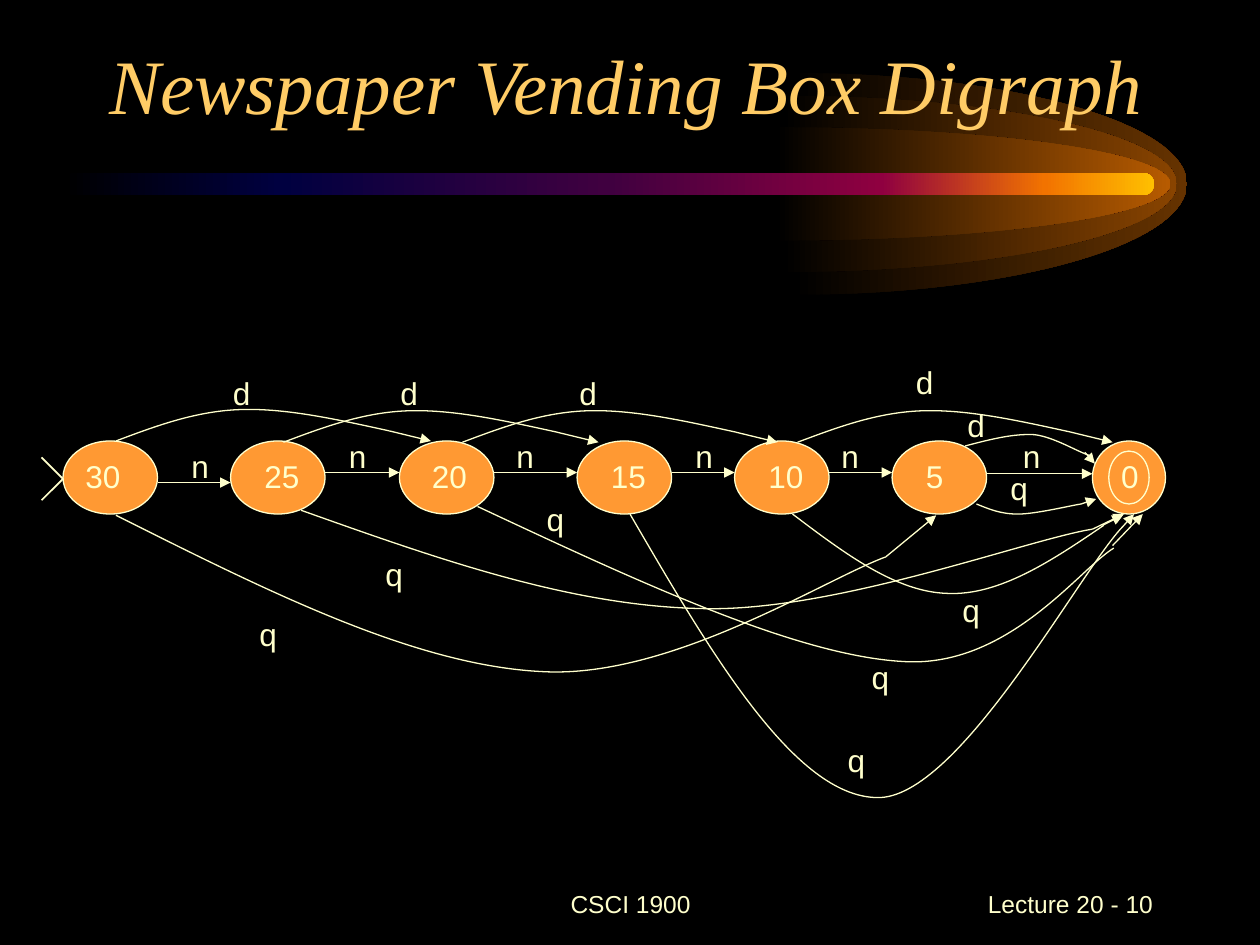
from lxml import etree
from pptx import Presentation
from pptx.dml.color import RGBColor
from pptx.enum.shapes import MSO_CONNECTOR, MSO_SHAPE
from pptx.enum.text import MSO_ANCHOR, PP_ALIGN
from pptx.oxml.ns import qn
from pptx.util import Inches, Pt

STRAIGHT = MSO_CONNECTOR.STRAIGHT
OVAL = MSO_SHAPE.OVAL
ROUNDED = MSO_SHAPE.ROUNDED_RECTANGLE
TOP, MIDDLE, BOTTOM = MSO_ANCHOR.TOP, MSO_ANCHOR.MIDDLE, MSO_ANCHOR.BOTTOM
LEFT, CENTER, RIGHT = PP_ALIGN.LEFT, PP_ALIGN.CENTER, PP_ALIGN.RIGHT
COLORS = {"background": "000000", "title": "FFCC66", "ink": "FFFFCC", "node": "FF9933"}

presentation = Presentation()
presentation.slide_width = Inches(10)
presentation.slide_height = Inches(7.5)
slide = presentation.slides.add_slide(presentation.slide_layouts[6])
slide.background.fill.solid()
slide.background.fill.fore_color.rgb = RGBColor.from_string(COLORS["background"])
shapes = slide.shapes


def add_text(words, left, top, width, height, size=18, font="Arial",
             color="ink", align=LEFT, anchor=TOP, italic=False):
    frame = shapes.add_textbox(Inches(left), Inches(top), Inches(width), Inches(height)).text_frame
    frame.word_wrap = True
    frame.vertical_anchor = anchor
    paragraph = frame.paragraphs[0]
    paragraph.alignment = align
    run = paragraph.add_run()
    run.text = words
    run.font.size = Pt(size)
    run.font.name = font
    run.font.italic = italic
    run.font.color.rgb = RGBColor.from_string(COLORS[color])


def add_curve(points):
    points = [(Inches(x), Inches(y)) for x, y in points]
    builder = shapes.build_freeform(*points[0], scale=1.0)
    builder.add_line_segments(points[3::3], close=False)
    shape = builder.convert_to_shape()
    shape.shadow.inherit = False
    segments = list(shape._element.spPr.iter(qn("a:lnTo")))
    for number, segment in enumerate(segments):
        segment.tag = qn("a:cubicBezTo")
        for position, (x, y) in enumerate(points[number * 3 + 1:number * 3 + 3]):
            handle = etree.Element(qn("a:pt"), x=str(x - shape.left), y=str(y - shape.top))
            segment.insert(position, handle)
    return shape


glow_middle = 1.46
glows = []
for left, right, half_height, color in [(6.29, 9.42, 0.88, "663300"), (6.21, 9.34, 0.7, "894400"),
                                        (6.16, 9.29, 0.45, "B75B00")]:
    pull_x = left + (right - left) * 0.55
    pull_y = half_height * 0.55
    top, bottom = glow_middle - half_height, glow_middle + half_height
    glow = add_curve([(left, top), (pull_x, top), (right, glow_middle - pull_y), (right, glow_middle),
                      (right, glow_middle + pull_y), (pull_x, bottom), (left, bottom)])
    glows.append((glow, [(0, "000000"), (100, color)]))

beam = shapes.add_shape(ROUNDED, Inches(0.5), Inches(1.37), Inches(8.66), Inches(0.18))
beam.adjustments[0] = 0.5
beam.shadow.inherit = False
glows.append((beam, [(0, "000000"), (20, "000040"), (50, "400040"),
                     (75, "8F0040"), (90, "F27300"), (100, "FFBF00")]))

for shape, stops in glows:
    shape.line.fill.background()
    shape.fill.gradient()
    shape.fill.gradient_angle = 0
    stop_list = shape._element.spPr.find(qn("a:gradFill")).find(qn("a:gsLst"))
    for stop in list(stop_list):
        stop_list.remove(stop)
    for percent, color in stops:
        stop = etree.SubElement(stop_list, qn("a:gs"), pos=str(percent * 1000))
        etree.SubElement(stop, qn("a:srgbClr"), val=color)

add_text("CSCI 1900", 3.42, 6.92, 3.17, 0.5, size=14, align=CENTER, anchor=MIDDLE)
add_text("Lecture 20 - 10", 7.17, 6.92, 2.08, 0.5, size=14, align=RIGHT, anchor=MIDDLE)
add_text("Newspaper Vending Box Digraph", 0.25, 0.25, 8.92, 0.83, size=44, font="Times New Roman",
         color="title", align=RIGHT, anchor=BOTTOM, italic=True)

node_lefts = [0.5, 1.83, 3.17, 4.58, 5.83, 7.08]
ovals = [(left, 3.5, 0.75, 0.58) for left in node_lefts]
ovals += [(8.67, 3.5, 0.58, 0.58), (8.8, 3.58, 0.32, 0.42)]
for place in ovals:
    oval = shapes.add_shape(OVAL, *[Inches(value) for value in place])
    oval.shadow.inherit = False
    oval.fill.solid()
    oval.fill.fore_color.rgb = RGBColor.from_string(COLORS["node"])
    oval.line.color.rgb = RGBColor.from_string(COLORS["ink"])
    oval.line.width = Pt(0.75)

label_lefts = [0.58, 2, 3.33, 4.75, 6, 7.25, 8.8]
for amount, left in zip(["30", "25", "20", "15", "10", "5", "0"], label_lefts):
    add_text(amount, left, 3.58, 0.39 if amount == "0" else 0.5, 0.4)

edge_labels = {
    "n": [(1.42, 3.5), (2.67, 3.42), (4, 3.42), (5.42, 3.42), (6.58, 3.42), (8.02, 3.42)],
    "d": [(1.75, 2.92), (3.08, 2.92), (4.5, 2.92), (7.17, 2.83), (7.58, 3.17)],
    "q": [(1.96, 4.83), (2.96, 4.36), (4.24, 3.92), (6.63, 5.83), (6.82, 5.17),
          (7.54, 4.64), (7.92, 3.67)],
}
for coin, places in edge_labels.items():
    for left, top in places:
        add_text(coin, left, top, 0.8 if coin == "q" else 0.42, 0.4)

lines = []
for left, next_left, y in zip(node_lefts, node_lefts[1:] + [8.67], [3.83] + [3.75] * 4 + [3.76]):
    lines.append(((left + 0.75, y), (next_left, y), True))

dime_starts = [(0.92, 3.5), (2.25, 3.51), (3.67, 3.51), (6.33, 3.51)]
curves = []
for x, y in dime_starts:
    curves.append([(x + dx, y + dy) for dx, dy in [
        (0, 0), (0.32, -0.12), (0.64, -0.24), (1, -0.25),
        (1.36, -0.26), (1.76, -0.17), (2.17, -0.08)]])
    lines.append(((x + 2.17, y - 0.08), (x + 2.5, y), True))

curves += [
    [(7.66, 3.54), (7.85, 3.49), (8.04, 3.44), (8.21, 3.45), (8.38, 3.47), (8.59, 3.61), (8.67, 3.62)],
    [(0.92, 4.09), (2.1, 4.68), (3.28, 5.28), (4.3, 5.33), (5.32, 5.39), (6.54, 4.6), (7.03, 4.42)],
    [(2.39, 4.05), (3.46, 4.43), (4.52, 4.81), (5.57, 4.83), (6.62, 4.86), (8.16, 4.28), (8.67, 4.2)],
    [(3.79, 4.02), (5.05, 4.61), (6.31, 5.2), (7.16, 5.25), (8, 5.31), (8.57, 4.51), (8.84, 4.35)],
    [(5, 4.08), (5.65, 5.2), (6.31, 6.32), (6.96, 6.33), (7.61, 6.35), (8.58, 4.51), (8.92, 4.17)],
    [(6.29, 4.08), (6.7, 4.39), (7.11, 4.7), (7.52, 4.71), (7.93, 4.73), (8.35, 4.45), (8.76, 4.17)],
    [(7.75, 4), (7.85, 4.04), (7.94, 4.08), (8.08, 4.08), (8.22, 4.08), (8.51, 4.01), (8.58, 4)],
]
for points in curves:
    curve = add_curve(points)
    curve.fill.background()
    curve.line.color.rgb = RGBColor.from_string(COLORS["ink"])
    curve.line.width = Pt(0.75)

lines += [
    ((8.61, 3.59), (8.69, 3.68), True),
    ((7.03, 4.42), (7.43, 4.09), True),
    ((8.67, 4.2), (8.92, 4.08), True),
    ((8.83, 4.33), (9.07, 4.08), True),
    ((8.92, 4.17), (9, 4.08), True),
    ((8.75, 4.17), (8.91, 4.09), True),
    ((8.58, 4), (8.7, 3.96), True),
    ((0.33, 3.63), (0.5, 3.8), False),
    ((0.5, 3.8), (0.33, 3.97), False),
]
for start, end, has_arrow in lines:
    connector = shapes.add_connector(STRAIGHT, *[Inches(value) for value in start + end])
    connector.line.color.rgb = RGBColor.from_string(COLORS["ink"])
    connector.line.width = Pt(0.75 if has_arrow else 1)
    if has_arrow:
        etree.SubElement(connector.line._get_or_add_ln(), qn("a:tailEnd"), type="triangle")
    etree.SubElement(connector._element.spPr, qn("a:effectLst"))

presentation.save("out.pptx")
